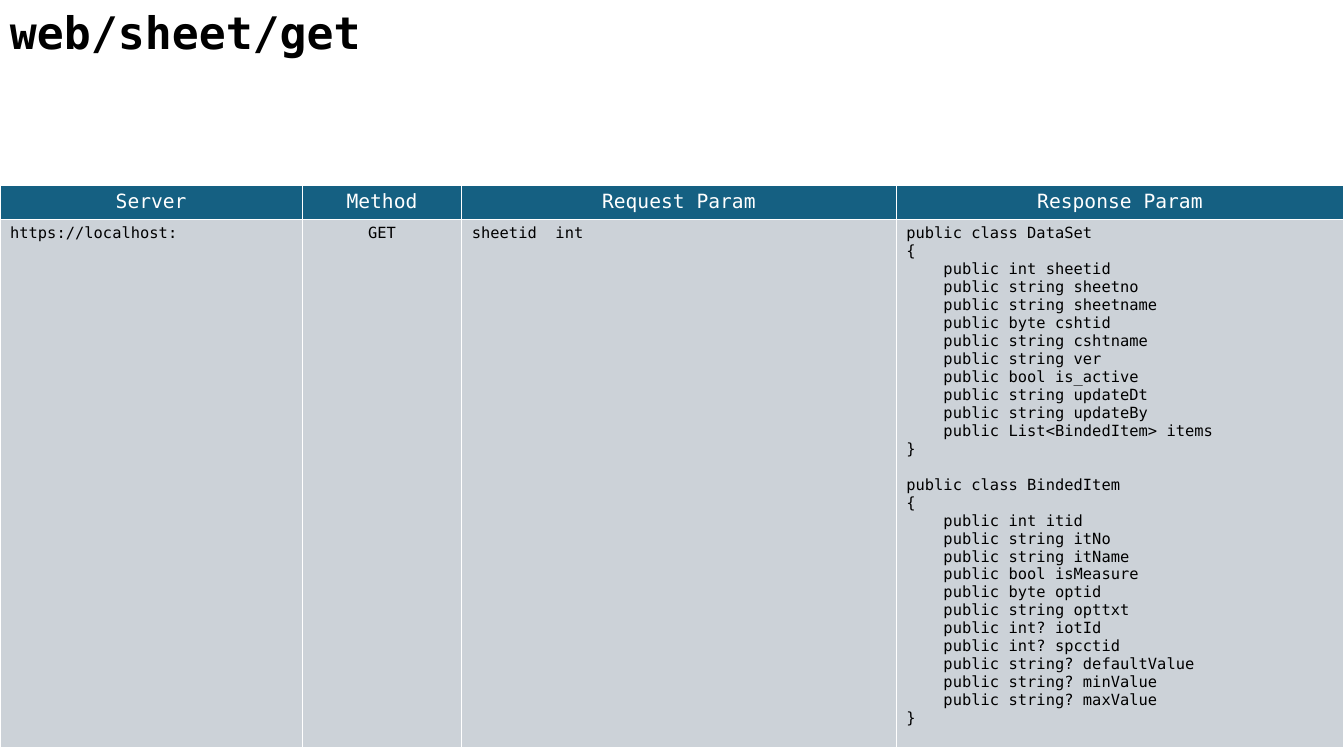
import pptx
import pptx.dml.color
import pptx.enum.text
import pptx.oxml
import pptx.oxml.ns
import pptx.util
from dataclasses import dataclass

ALIGN = pptx.enum.text.PP_ALIGN
PAGE_WIDTH, PAGE_HEIGHT = 13.33, 7.5


@dataclass(frozen=True)
class Theme:
    font: str = "DejaVu Sans Mono"
    ink: str = "000000"
    paper: str = "FFFFFF"
    header_fill: str = "156082"
    body_fill: str = "CCD2D8"
    title_size: int = 32
    header_size: int = 14
    body_size: int = 11
    blank_line: float = 12.8
    rule: float = 1
    tab: float = 0.83


THEME = Theme()

DATA_SET = """public class DataSet
{
    public int sheetid
    public string sheetno
    public string sheetname
    public byte cshtid
    public string cshtname
    public string ver
    public bool is_active
    public string updateDt
    public string updateBy
    public List<BindedItem> items
}"""

BINDED_ITEM = """public class BindedItem
{
    public int itid
    public string itNo
    public string itName
    public bool isMeasure
    public byte optid
    public string opttxt
    public int? iotId
    public int? spcctid
    public string? defaultValue
    public string? minValue
    public string? maxValue
}"""

# heading, width in inches, body alignment, blocks of body text
COLUMNS = [
    ("Server", 3, ALIGN.LEFT, ["https://localhost:"]),
    ("Method", 1.58, ALIGN.CENTER, ["GET"]),
    ("Request Param", 4.31, ALIGN.LEFT, ["sheetid\tint"]),
    ("Response Param", 4.44, ALIGN.LEFT, [DATA_SET, BINDED_ITEM]),
]
ROW_HEIGHTS = [0.33, 5.24]


def inches(*lengths):
    return [pptx.util.Inches(length) for length in lengths]


def add_tab_stop(para, position):
    tabs = pptx.oxml.parse_xml(
        f'<a:tabLst {pptx.oxml.ns.nsdecls("a")}>'
        f'<a:tab pos="{pptx.util.Inches(position)}" algn="l"/></a:tabLst>')
    para._p.get_or_add_pPr().append(tabs)


def write(frame, blocks, size, color, align=ALIGN.LEFT, bold=False):
    """Write each line as a paragraph, with a line's gap between blocks."""
    style = {"name": THEME.font, "size": pptx.util.Pt(size), "bold": bold}
    para = frame.paragraphs[0]
    for block_index, block in enumerate(blocks):
        for line_index, line in enumerate(block.splitlines()):
            if block_index or line_index:
                para = frame.add_paragraph()
            para.alignment = align
            if block_index and not line_index:
                para.space_before = pptx.util.Pt(THEME.blank_line)
            if "\t" in line:
                add_tab_stop(para, THEME.tab)
            span = para.add_run()
            span.text = line
            for name, value in style.items():
                setattr(span.font, name, value)
            span.font.color.rgb = pptx.dml.color.RGBColor.from_string(color)


def paint_cell(cell, fill):
    cell.fill.solid()
    cell.fill.fore_color.rgb = pptx.dml.color.RGBColor.from_string(fill)
    properties = cell._tc.get_or_add_tcPr()
    for index, side in enumerate("LRTB"):
        properties.insert(index, pptx.oxml.parse_xml(
            f'<a:ln{side} {pptx.oxml.ns.nsdecls("a")} w="{pptx.util.Pt(THEME.rule)}">'
            f'<a:solidFill><a:srgbClr val="{THEME.paper}"/></a:solidFill></a:ln{side}>'))


def add_title(page, box, text):
    frame = page.shapes.add_textbox(*inches(*box)).text_frame
    frame.word_wrap = True
    frame.auto_size = pptx.enum.text.MSO_AUTO_SIZE.SHAPE_TO_FIT_TEXT
    write(frame, [text], THEME.title_size, THEME.ink, bold=True)


def add_endpoint_table(page, box):
    left, top, width, height = box
    table = page.shapes.add_table(
        len(ROW_HEIGHTS), len(COLUMNS), *inches(left, top, width, height)).table
    for row, share in zip(table.rows, ROW_HEIGHTS):
        row.height = pptx.util.Inches(height * share / sum(ROW_HEIGHTS))
    total = sum(column[1] for column in COLUMNS)
    for index, (heading, share, align, blocks) in enumerate(COLUMNS):
        table.columns[index].width = pptx.util.Inches(width * share / total)
        header, body = table.cell(0, index), table.cell(1, index)
        paint_cell(header, THEME.header_fill)
        paint_cell(body, THEME.body_fill)
        write(header.text_frame, [heading], THEME.header_size, THEME.paper, ALIGN.CENTER)
        write(body.text_frame, blocks, THEME.body_size, THEME.ink, align)


def main():
    deck = pptx.Presentation()
    deck.slide_width, deck.slide_height = inches(PAGE_WIDTH, PAGE_HEIGHT)
    page = deck.slides.add_slide(deck.slide_layouts[6])
    add_title(page, (0, 0, 9.45, 0.64), "web/sheet/get")
    add_endpoint_table(page, (0, 1.84, PAGE_WIDTH, sum(ROW_HEIGHTS)))
    deck.save("out.pptx")


if __name__ == "__main__":
    main()
